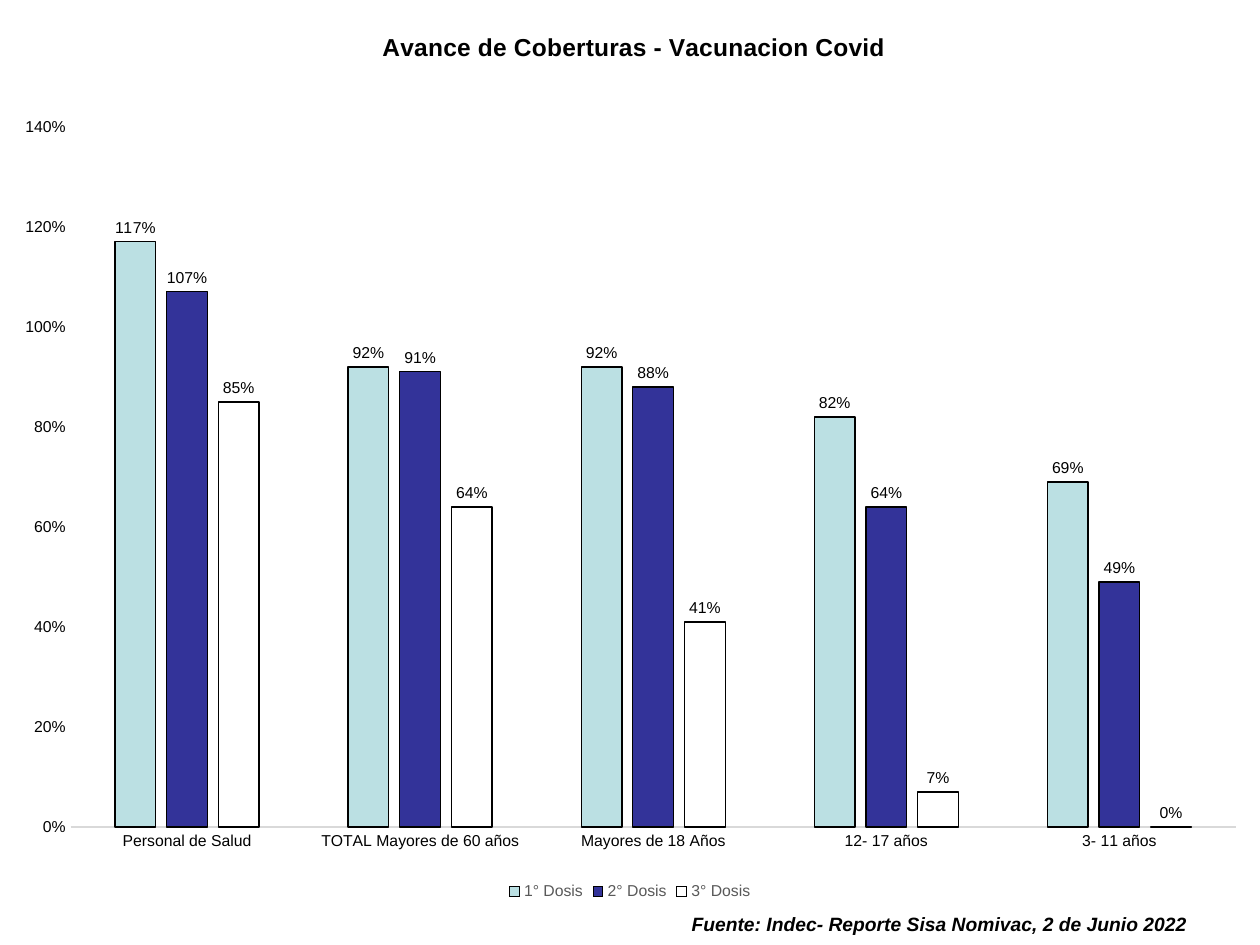
from lxml import etree
from pptx import Presentation
from pptx.chart.data import CategoryChartData
from pptx.dml.color import RGBColor
from pptx.enum.chart import XL_CHART_TYPE as ChartType
from pptx.enum.chart import XL_LABEL_POSITION as LabelPosition
from pptx.enum.chart import XL_LEGEND_POSITION as LegendPosition
from pptx.enum.chart import XL_TICK_MARK as TickMark
from pptx.enum.text import MSO_AUTO_SIZE as AutoSize
from pptx.oxml.ns import qn
from pptx.util import Inches, Pt


def style_font(font, size, color="000000", bold=False, italic=False):
    font.name = "Arial"
    font.size = Pt(size)
    font.bold = bold
    font.italic = italic
    font.color.rgb = RGBColor.from_string(color)


def set_layout(element, index, **settings):
    """Place a chart part by fractions of the chart's size."""
    for old_layout in element.findall(qn("c:layout")):
        element.remove(old_layout)
    layout = etree.Element(qn("c:layout"))
    manual = etree.SubElement(layout, qn("c:manualLayout"))
    for tag, value in settings.items():
        etree.SubElement(manual, qn(f"c:{tag}")).set("val", str(value))
    element.insert(index, layout)


presentation = Presentation()
presentation.slide_width = Inches(10)
presentation.slide_height = Inches(7.5)
slide = presentation.slides.add_slide(presentation.slide_layouts[6])

# Source note
source_box = slide.shapes.add_textbox(Inches(5.39), Inches(7.19), Inches(5), Inches(0.29))
text_frame = source_box.text_frame
text_frame.word_wrap = True
text_frame.auto_size = AutoSize.SHAPE_TO_FIT_TEXT
text_frame.text = "Fuente: Indec- Reporte Sisa Nomivac, 2 de Junio 2022"
style_font(text_frame.paragraphs[0].runs[0].font, 11, bold=True, italic=True)

# Coverage by group and dose
doses = [
    ("1° Dosis", "BBE0E3", [1.17, 0.92, 0.92, 0.82, 0.69]),
    ("2° Dosis", "333399", [1.07, 0.91, 0.88, 0.64, 0.49]),
    ("3° Dosis", "FFFFFF", [0.85, 0.64, 0.41, 0.07, 0]),
]
chart_data = CategoryChartData(number_format="0%")
chart_data.categories = ["Personal de Salud", "TOTAL Mayores de 60 años",
                         "Mayores de 18 Años", "12- 17 años", "3- 11 años"]
for name, color, values in doses:
    chart_data.add_series(name, values)
chart = slide.shapes.add_chart(ChartType.COLUMN_CLUSTERED, Inches(0), Inches(0),
                               Inches(10), Inches(7.19), chart_data).chart
style_font(chart.font, 10)

# Chart title
title = chart.chart_title
title.text_frame.text = "Avance de Coberturas - Vacunacion Covid"
style_font(title.text_frame.paragraphs[0].runs[0].font, 14, bold=True)

# Columns and their labels
plot = chart.plots[0]
plot.gap_width = 219
plot.overlap = -27
plot.vary_by_categories = False
for series, (name, color, values) in zip(plot.series, doses):
    series.format.fill.solid()
    series.format.fill.fore_color.rgb = RGBColor.from_string(color)
    series.format.line.color.rgb = RGBColor.from_string("000000")
    series.format.line.width = Pt(0.75)
    series.invert_if_negative = False
    labels = series.data_labels
    labels.show_value = True
    labels.position = LabelPosition.OUTSIDE_END
    labels.number_format = "0%"
    labels.number_format_is_linked = False
    style_font(labels.font, 9)

# Axes
for axis in (chart.category_axis, chart.value_axis):
    axis.major_tick_mark = TickMark.NONE
    axis.minor_tick_mark = TickMark.NONE
    axis.has_major_gridlines = False
    style_font(axis.tick_labels.font, 9)
chart.category_axis.format.line.color.rgb = RGBColor.from_string("D9D9D9")
chart.category_axis.format.line.width = Pt(0.75)
value_axis = chart.value_axis
value_axis.format.line.fill.background()
value_axis.minimum_scale = 0
value_axis.maximum_scale = 1.4
value_axis.major_unit = 0.2
value_axis.tick_labels.number_format = "0%"
value_axis.tick_labels.number_format_is_linked = False

# Legend
chart.has_legend = True
chart.legend.position = LegendPosition.BOTTOM
chart.legend.include_in_layout = False
style_font(chart.legend.font, 9, "595959")

# Title and plot positions
title_element = chart.element.find(".//" + qn("c:title"))
set_layout(title_element, 1, xMode="edge", yMode="edge", x=0.3, y=0.03)
plot_area = chart.element.find(".//" + qn("c:plotArea"))
set_layout(plot_area, 0, layoutTarget="inner", xMode="edge", yMode="edge",
           x=0.056, y=0.14, w=0.925, h=0.773)

presentation.save("out.pptx")
